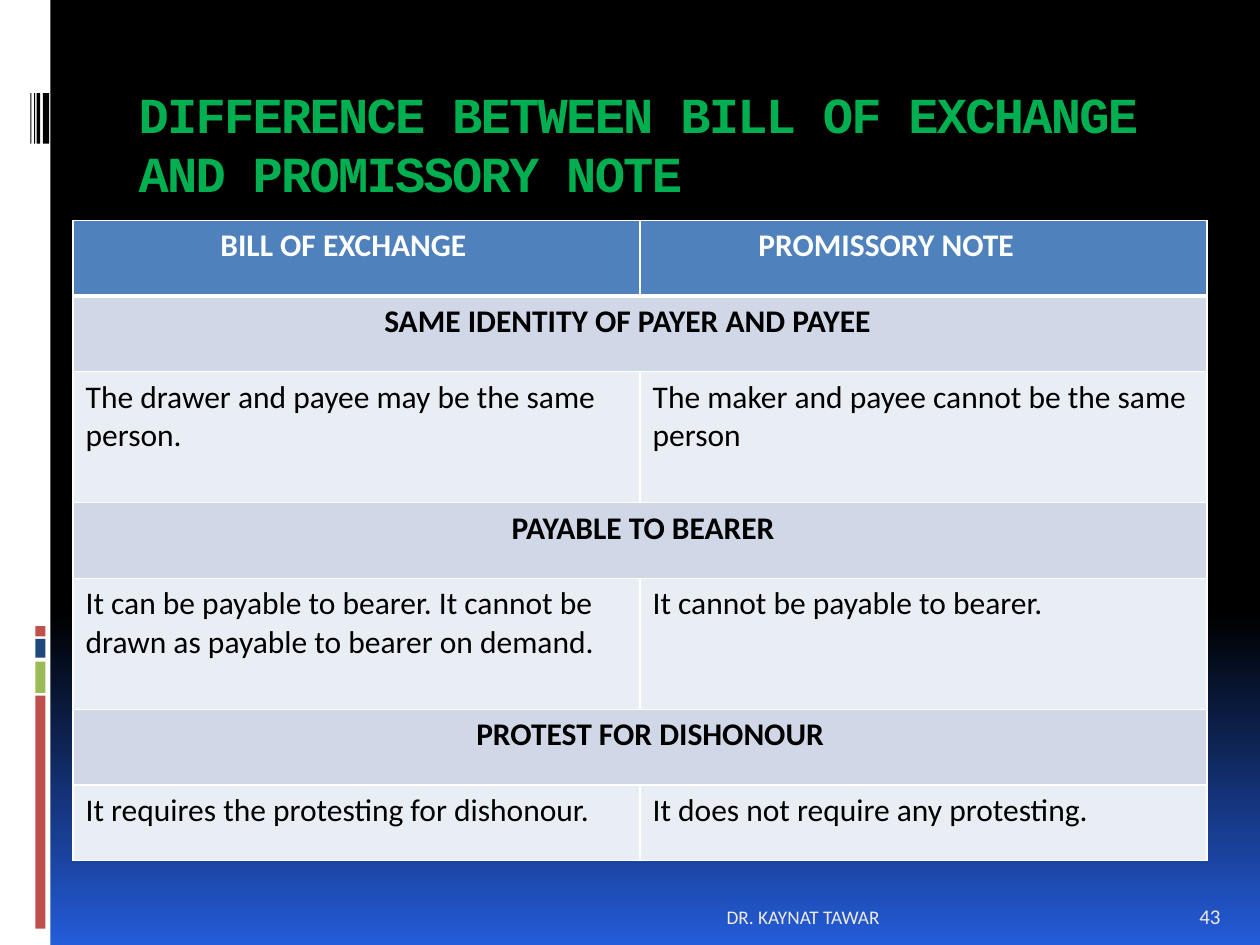
from copy import deepcopy

from lxml import etree
from pptx import Presentation, util as u
from pptx.dml.color import RGBColor
from pptx.enum import shapes, text
from pptx.oxml import ns

WHITE = RGBColor(0xFF, 0xFF, 0xFF)
BLACK = RGBColor(0, 0, 0)
ROYAL = RGBColor(0x24, 0x5C, 0xD9)
RED = RGBColor(0xC0, 0x50, 0x4D)
LIME = RGBColor(0x9B, 0xBB, 0x59)
NAVY = RGBColor(0x1F, 0x49, 0x7D)
GREEN = RGBColor(0, 0xB0, 0x50)
HEADER = RGBColor(0x4F, 0x81, 0xBD)
BAND = RGBColor(0xD0, 0xD8, 0xE8)
PALE = RGBColor(0xE9, 0xED, 0xF4)
CREAM = RGBColor(0xEE, 0xEC, 0xE1)

SHORT, TALL = 0.6, 1.04
HEADS = [("BILL OF EXCHANGE", 1.17), ("PROMISSORY NOTE", 0.94)]
SECTIONS = [
    ("SAME IDENTITY OF PAYER AND PAYEE", 2.47, TALL,
     ["The drawer and payee may be the same person.",
      "The maker and payee cannot be the same person"]),
    ("PAYABLE TO BEARER", 3.48, TALL,
     ["It can be payable to bearer. It cannot be drawn as payable to bearer on demand.",
      "It cannot be payable to bearer."]),
    ("PROTEST FOR DISHONOUR", 3.2, SHORT,
     ["It requires the protesting for dishonour.",
      "It does not require any protesting."]),
]
BARS = [
    (0, 0, 0.4, 7.5, WHITE),
    (0.28, 5.52, 0.08, 1.85, RED),
    (0.28, 5.25, 0.08, 0.25, LIME),
    (0.28, 5.07, 0.08, 0.15, NAVY),
    (0.28, 4.97, 0.08, 0.08, RED),
]
STRIPES = [(0.34, 0.05), (0.29, 0.03), (0.27, 0.01), (0.24, 0.01)]


def inches(*values):
    return [u.Inches(v) for v in values]


def apply(target, **values):
    for name, value in values.items():
        setattr(target, name, value)


def write(tf, words, size, color, bold=False, face="Calibri", align=None):
    p = tf.paragraphs[0]
    p.alignment = align
    r = p.add_run()
    r.text = words
    apply(r.font, size=u.Pt(size), name=face, bold=bold)
    r.font.color.rgb = color
    return p, r


def paint_background(s):
    fill = s.background.fill
    fill.gradient()
    fill.gradient_angle = 270
    for stop, position, color in zip(fill.gradient_stops, (0.65, 1), (BLACK, ROYAL)):
        stop.position = position
        stop.color.rgb = color
    stops = next(s.background._cSld.iter(ns.qn("a:gsLst")))
    first = deepcopy(stops[0])
    first.set("pos", "0")
    stops.insert(0, first)


def add_bar(s, left, top, width, height, color):
    sp = s.shapes.add_shape(shapes.MSO_SHAPE.RECTANGLE, *inches(left, top, width, height))
    sp.shadow.inherit = False
    sp.fill.solid()
    sp.fill.fore_color.rgb = color
    sp.line.fill.background()


def set_title(s, words):
    sp = s.shapes.title
    apply(sp, **dict(zip(("left", "top", "width", "height"), inches(1, 0.56, 8.5, 1))))
    tf = sp.text_frame
    apply(tf, word_wrap=True, auto_size=text.MSO_AUTO_SIZE.NONE,
          vertical_anchor=text.MSO_ANCHOR.TOP, margin_top=u.Inches(0.11))
    p, r = write(tf, words, 28.8, GREEN, True, "Courier New", text.PP_ALIGN.LEFT)
    p.line_spacing = u.Pt(33.7)
    r.font._element.set("spc", "-100")


def add_footer(s, left, width, words, size, align):
    tf = s.shapes.add_textbox(*inches(left, 7.02, width, 0.4)).text_frame
    apply(tf, word_wrap=True, vertical_anchor=text.MSO_ANCHOR.BOTTOM)
    write(tf, words, size, CREAM, align=align)


def add_borders(cell, widths):
    tcPr = cell._tc.get_or_add_tcPr()
    for side, width in zip("LRTB", widths):
        ln = etree.SubElement(tcPr, ns.qn("a:ln" + side), w=str(u.Pt(width)))
        fill = etree.SubElement(ln, ns.qn("a:solidFill"))
        etree.SubElement(fill, ns.qn("a:srgbClr"), val=str(WHITE))


def fill_cell(cell, words, fill, color=BLACK, bold=False, indent=0.1):
    cell.fill.solid()
    cell.fill.fore_color.rgb = fill
    cell.margin_left = u.Inches(indent)
    write(cell.text_frame, words, 18, color, bold)


def add_comparison(s):
    heights = [SHORT]
    for section in SECTIONS:
        heights += [SHORT, section[2]]
    frame = s.shapes.add_table(len(heights), 2, *inches(0.58, 1.75, 9, sum(heights)))
    table = frame.table
    for i, height in enumerate(heights):
        table.rows[i].height = u.Inches(height)
        top, bottom = 3 if i == 1 else 1, 3 if i == 0 else 1
        for cell in table.rows[i].cells:
            add_borders(cell, (1, 1, top, bottom))
    for col, (words, indent) in enumerate(HEADS):
        fill_cell(table.cell(0, col), words, HEADER, WHITE, True, indent)
    for i, (heading, indent, _, answers) in enumerate(SECTIONS):
        row = 2 * i + 1
        table.cell(row, 0).merge(table.cell(row, 1))
        fill_cell(table.cell(row, 0), heading, BAND, bold=True, indent=indent)
        for col, words in enumerate(answers):
            fill_cell(table.cell(row + 1, col), words, PALE)


def main():
    prs = Presentation()
    apply(prs, slide_width=u.Inches(10), slide_height=u.Inches(7.5))
    s = prs.slides.add_slide(prs.slide_layouts[5])
    paint_background(s)
    for bar in BARS:
        add_bar(s, *bar)
    for left, width in STRIPES:
        add_bar(s, left, 0.74, width, 0.4, BLACK)
    set_title(s, "DIFFERENCE BETWEEN BILL OF EXCHANGE AND PROMISSORY NOTE")
    add_comparison(s)
    add_footer(s, 9.42, 0.5, "43", 12, text.PP_ALIGN.LEFT)
    add_footer(s, 1, 6.08, "DR. KAYNAT TAWAR", 11, text.PP_ALIGN.RIGHT)
    prs.save("out.pptx")


if __name__ == "__main__":
    main()
